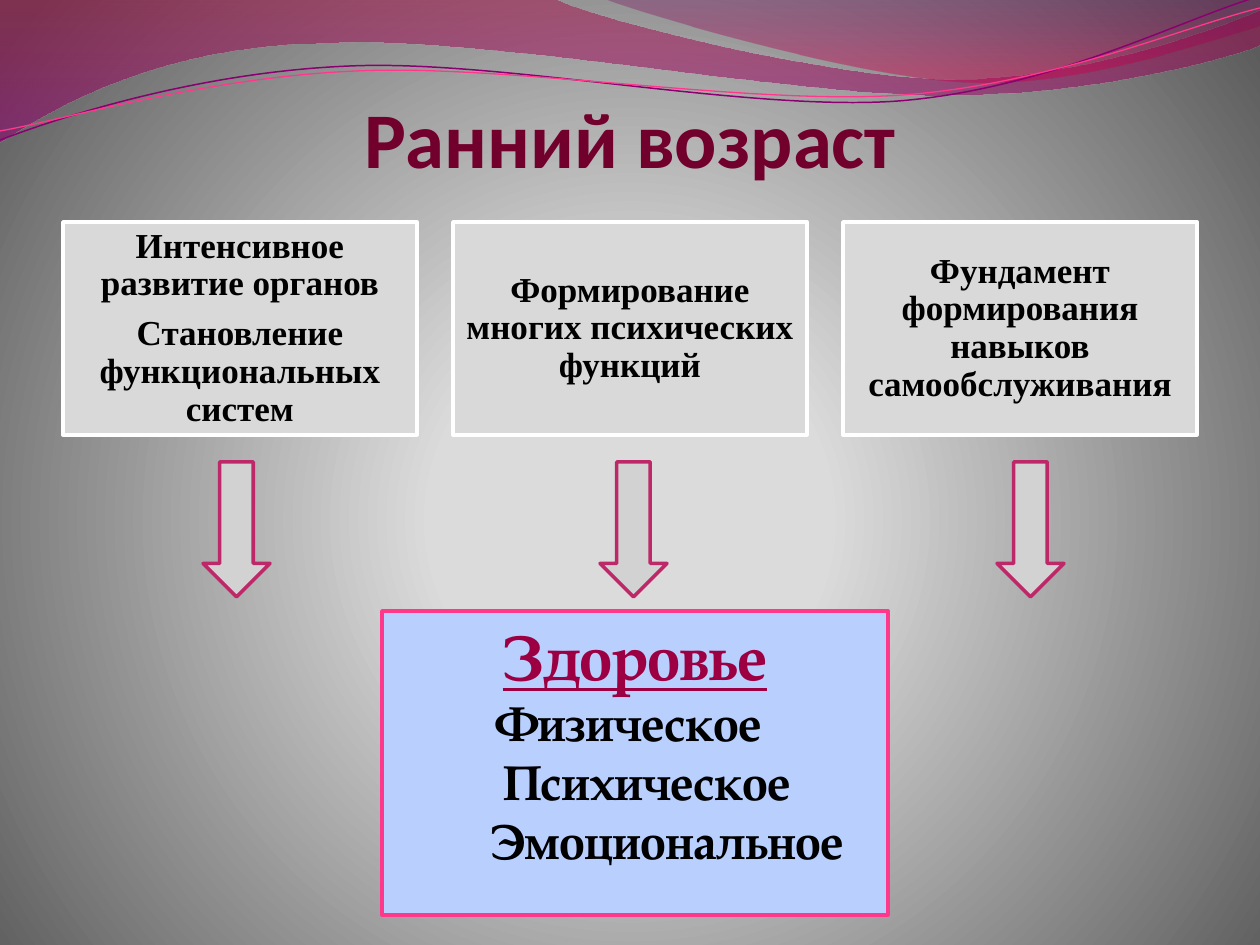
from dataclasses import dataclass

from lxml import etree
from pptx import Presentation
from pptx.dml.color import RGBColor
from pptx.enum.shapes import MSO_SHAPE
from pptx.enum.text import MSO_ANCHOR, MSO_AUTO_SIZE, PP_ALIGN
from pptx.oxml import parse_xml
from pptx.oxml.ns import nsdecls, qn
from pptx.util import Pt

RECTANGLE, DOWN_ARROW = MSO_SHAPE.RECTANGLE, MSO_SHAPE.DOWN_ARROW
TOP, MIDDLE, BOTTOM = MSO_ANCHOR.TOP, MSO_ANCHOR.MIDDLE, MSO_ANCHOR.BOTTOM
CENTER = PP_ALIGN.CENTER
PX = 914400 / 126


@dataclass(frozen=True)
class Theme:
    title_font: str = "Calibri"
    card_font: str = "Times New Roman"
    health_font: str = "TeX Gyre Pagella"
    title_size: int = 45
    card_size: int = 20
    heading_size: int = 36
    item_size: int = 28
    title: str = "72002C"
    heading: str = "9C0042"
    text: str = "000000"
    card_fill: str = "D9D9D9"
    card_line: str = "FFFFFF"
    arrow_fill: str = "D2D2D2"
    arrow_line: str = "BD2968"
    health_fill: str = "B9D0FF"
    pink: str = "FF388C"
    purple: str = "8A0070"
    # Gradient stops: position %, colour, opacity %
    backdrop: tuple = ((0, "DCDCDC", 100), (25, "DBDBDB", 100), (100, "5C5C5C", 100))
    wide_wave: tuple = ((0, "A90042", 45), (100, "8E0073", 55))
    small_wave: tuple = ((0, "73005E", 30), (80, "C9004F", 45))


theme = Theme()


def gradient(stops, direction):
    """Return a gradFill element; direction is its a:lin or a:path markup."""
    marks = "".join(
        f'<a:gs pos="{position * 1000}"><a:srgbClr val="{color}">'
        f'<a:alpha val="{opacity * 1000}"/></a:srgbClr></a:gs>'
        for position, color, opacity in stops
    )
    return parse_xml(
        f'<a:gradFill {nsdecls("a")} rotWithShape="1">'
        f"<a:gsLst>{marks}</a:gsLst>{direction}</a:gradFill>"
    )


def add_run(paragraph, text, font, size, color):
    run = paragraph.add_run()
    run.text = text
    run.font.name, run.font.size, run.font.bold = font, Pt(size), True
    run.font.color.rgb = RGBColor.from_string(color)
    return run


prs = Presentation()
prs.slide_width, prs.slide_height = round(1260 * PX), round(945 * PX)
slide = prs.slides.add_slide(prs.slide_layouts[5])
shapes = slide.shapes

# Backdrop
slide.background.fill.solid()
backdrop = slide.background._cSld.find(qn("p:bg")).find(qn("p:bgPr"))
backdrop.replace(
    backdrop.find(qn("a:solidFill")),
    gradient(
        theme.backdrop,
        '<a:path path="circle"><a:fillToRect l="10000" t="110000" r="10000" b="100000"/></a:path>',
    ),
)

# Waves: start, then line ends (x, y) and Bezier segments (three points),
# followed by fill stops, line colour and line width
waves = [
    ((0, 0), [
        (554, -1),
        (600, 21, 837, 79, 955, 79),
        (1075, 79, 1207, 33, 1260, 11),
        (1261, 45),
        (1239, 55, 1096, 96, 940, 95),
        (784, 95, 481, 35, 324, 43),
        (163, 45, 58, 105, -1, 142),
    ], theme.wide_wave, None, 0),
    ((604, -1), [
        (641, 14, 859, 78, 969, 82),
        (1079, 87, 1211, 40, 1260, 26),
        (1260, 0),
    ], theme.small_wave, None, 0),
    ((0, 140), [
        (60, 117, 199, 72, 349, 66),
        (498, 59, 747, 112, 898, 101),
        (1050, 89, 1182, 19, 1257, -3),
    ], None, theme.purple, 0.85),
    ((0, 131), [
        (59, 121, 207, 77, 357, 71),
        (508, 64, 752, 106, 903, 95),
        (1053, 84, 1186, 26, 1260, 8),
    ], None, theme.pink, 0.75),
]
for start, segments, stops, line_color, line_width in waves:
    points = [pair for segment in segments for pair in zip(segment[::2], segment[1::2])]
    builder = shapes.build_freeform(*start, scale=PX)
    builder.add_line_segments(points, close=stops is not None)
    wave = builder.convert_to_shape()
    # Gather each three-point segment into one Bezier curve
    line_steps = iter(list(wave._element.iter(qn("a:lnTo"))))
    for segment in segments:
        steps = [next(line_steps) for _ in segment[::2]]
        if len(steps) == 3:
            curve = etree.Element(qn("a:cubicBezTo"))
            steps[0].addprevious(curve)
            for step in steps:
                curve.append(step[0])
                step.getparent().remove(step)
    wave.shadow.inherit = False
    wave.fill.background()
    if stops:
        wave.line.fill.background()
        properties = wave._element.spPr
        properties.replace(properties.find(qn("a:noFill")),
                           gradient(stops, '<a:lin ang="5400000" scaled="0"/>'))
    else:
        wave.line.color.rgb = RGBColor.from_string(line_color)
        wave.line.width = Pt(line_width)

# Title, in front of the waves
title = shapes.title
shapes._spTree.append(title._element)
title.left, title.top, title.width, title.height = (round(n * PX) for n in (63, 95, 1134, 89))
frame = title.text_frame
frame.auto_size, frame.vertical_anchor = MSO_AUTO_SIZE.NONE, BOTTOM
frame.margin_left = frame.margin_right = frame.margin_bottom = 0
frame.margin_top = round(6 * PX)
frame.paragraphs[0].alignment = CENTER
add_run(frame.paragraphs[0], "Ранний возраст", theme.title_font, theme.title_size, theme.title)

# Cards, health box and arrows share one way of drawing
card_texts = [
    ["Интенсивное развитие органов", "Становление функциональных систем"],
    ["Формирование многих психических функций"],
    ["Фундамент формирования навыков самообслуживания"],
]
card_style = (RECTANGLE, theme.card_fill, theme.card_line)
health_style = (RECTANGLE, theme.health_fill, theme.pink)
arrow_style = (DOWN_ARROW, theme.arrow_fill, theme.arrow_line)
boxes = [((63 + 390 * i, 222, 354, 213), card_style) for i in range(3)]
boxes.append(((382, 611, 506, 304), health_style))
boxes += [((203 + 397 * i, 462, 67, 135), arrow_style) for i in range(3)]
drawn = []
for bounds, (preset, fill, line) in boxes:
    box = shapes.add_shape(preset, *(round(n * PX) for n in bounds))
    box.shadow.inherit = False
    box.fill.solid()
    box.fill.fore_color.rgb = RGBColor.from_string(fill)
    box.line.color.rgb = RGBColor.from_string(line)
    box.line.width = Pt(2)
    drawn.append(box)

for card, texts in zip(drawn, card_texts):
    frame = card.text_frame
    frame.word_wrap, frame.vertical_anchor = True, MIDDLE
    frame.margin_left = frame.margin_right = round(10 * PX)
    frame.margin_top = frame.margin_bottom = round(10 * PX)
    for i, text in enumerate(texts):
        paragraph = frame.add_paragraph() if i else frame.paragraphs[0]
        paragraph.alignment = CENTER
        paragraph.line_spacing, paragraph.space_after = 0.9, Pt(7)
        add_run(paragraph, text, theme.card_font, theme.card_size, theme.text)

# Health box: heading, then items with left and right indents
frame = drawn[len(card_texts)].text_frame
frame.word_wrap, frame.vertical_anchor = True, TOP
heading = frame.paragraphs[0]
heading.alignment = CENTER
add_run(heading, "Здоровье", theme.health_font, theme.heading_size,
        theme.heading).font.underline = True
for text, left, right in [("Физическое", 0, 14), ("Психическое", 24, 0), ("Эмоциональное", 63, 0)]:
    item = frame.add_paragraph()
    item.alignment = CENTER
    indents = item._p.get_or_add_pPr()
    indents.set("marL", str(round(left * PX)))
    indents.set("marR", str(round(right * PX)))
    add_run(item, text, theme.health_font, theme.item_size, theme.text)

prs.save("out.pptx")
